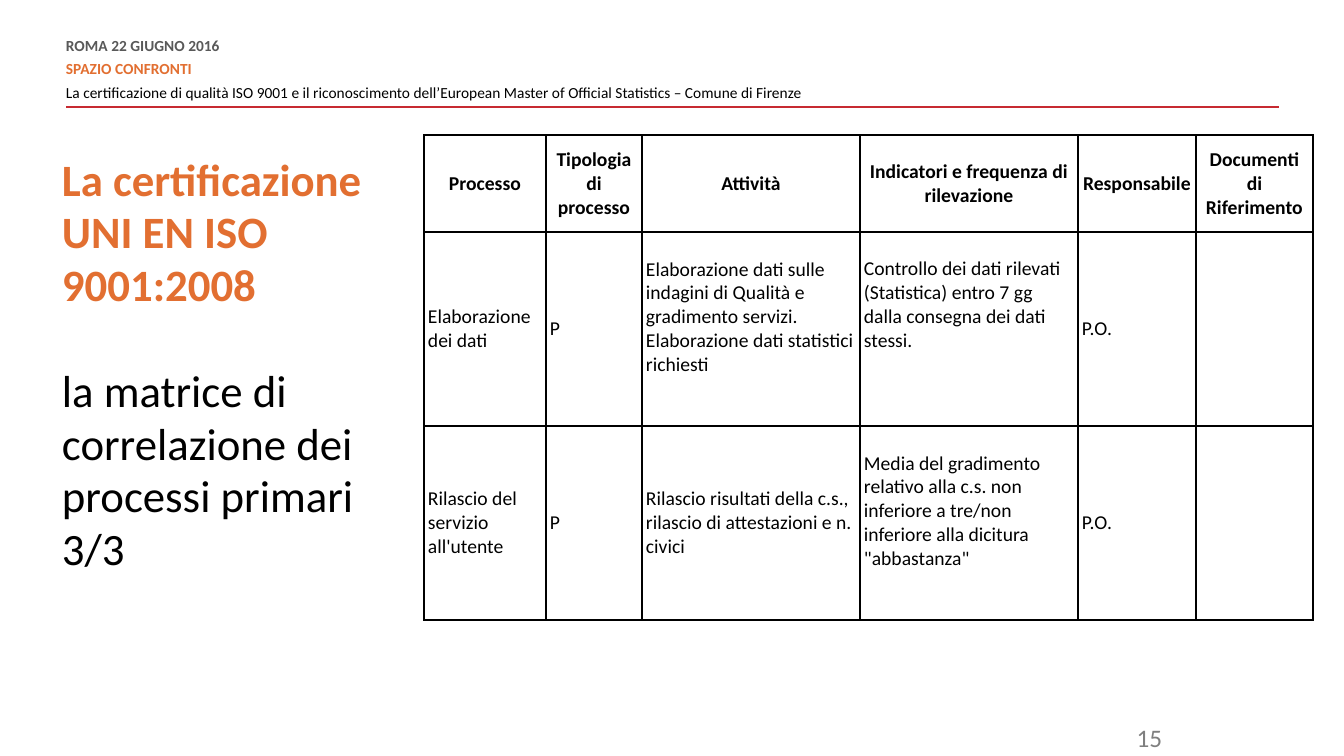
"""Build the slide with the matrix of primary processes."""
import pptx
import pptx.util
import pptx.dml.color
import pptx.enum.shapes
import pptx.enum.text
import pptx.oxml.ns
from lxml import etree

ORANGE = pptx.dml.color.RGBColor(0xE2, 0x6F, 0x31)
RED = pptx.dml.color.RGBColor(0xC7, 0x2A, 0x31)
DARK_GREY = pptx.dml.color.RGBColor(0x59, 0x59, 0x59)
GREY = pptx.dml.color.RGBColor(0x7F, 0x7F, 0x7F)
BLACK = pptx.dml.color.RGBColor(0, 0, 0)
FONT = "Calibri"
PX = 914400 / 100.8
ALIGN = pptx.enum.text.PP_ALIGN
qn = pptx.oxml.ns.qn


def px(n):
    return pptx.util.Emu(round(n * PX))


def add_run(p, text, size, color, bold=False):
    r = p.add_run()
    r.text = text
    r.font.name = FONT
    r.font.size = pptx.util.Pt(size)
    r.font.bold = bold
    r.font.color.rgb = color


prs = pptx.Presentation()
prs.slide_width = px(1344)
prs.slide_height = px(756)
s = prs.slides.add_slide(prs.slide_layouts[6])

rule = s.shapes.add_connector(
    pptx.enum.shapes.MSO_CONNECTOR.STRAIGHT, px(1279), px(107), px(66), px(107))
rule.line.color.rgb = RED
rule.line.width = pptx.util.Pt(2)
etree.SubElement(rule.element.spPr, qn("a:effectLst"))

frames = []
for box in [(66, 39, 841, 64), (62, 154, 334, 383), (870, 717, 302, 40)]:
    tf = s.shapes.add_textbox(*[px(n) for n in box]).text_frame
    tf.word_wrap = True
    frames.append(tf)
header, title, number = frames
for tf in (header, title):
    tf.margin_left = tf.margin_right = tf.margin_top = tf.margin_bottom = 0

header_lines = [
    ("ROMA 22 GIUGNO 2016", DARK_GREY, True),
    ("SPAZIO CONFRONTI", ORANGE, True),
    ("La certificazione di qualità ISO 9001 e il riconoscimento dell’European "
     "Master of Official Statistics – Comune di Firenze", BLACK, False),
]
for i, (text, color, bold) in enumerate(header_lines):
    p = header.add_paragraph() if i else header.paragraphs[0]
    p.line_spacing = pptx.util.Pt(10.8)
    p.space_after = pptx.util.Pt(6)
    add_run(p, text, 11, color, bold)

p = title.paragraphs[0]
p.line_spacing = 0.98
add_run(p, "La certificazione UNI EN ISO 9001:2008", 32, ORANGE, True)
p = title.add_paragraph()
p.line_spacing = 0.98
p.space_before = pptx.util.Pt(38)
add_run(p, "la matrice di correlazione dei processi primari", 32, BLACK)
p.add_line_break()
add_run(p, "3/3", 32, BLACK)

p = number.paragraphs[0]
p.alignment = ALIGN.RIGHT
add_run(p, "15", 18, GREY)

rows = [
    ["Processo", "Tipologia di processo", "Attività",
     "Indicatori e frequenza di rilevazione", "Responsabile",
     "Documenti di Riferimento"],
    ["Elaborazione dei dati", "P",
     "Elaborazione dati sulle indagini di Qualità e gradimento servizi. "
     "Elaborazione dati statistici richiesti",
     "Controllo dei dati rilevati (Statistica) entro 7 gg dalla consegna dei "
     "dati stessi.", "P.O.", ""],
    ["Rilascio del servizio all'utente", "P",
     "Rilascio risultati della c.s., rilascio di attestazioni e n. civici",
     "Media del gradimento relativo alla c.s. non inferiore a tre/non "
     "inferiore alla dicitura \"abbastanza\"", "P.O.", ""],
]
col_widths = [122, 96, 218, 218, 118, 117]
row_heights = [97, 194, 194]
bottom_margins = {(1, 2): 24, (1, 3): 48, (2, 3): 24}

table = s.shapes.add_table(
    len(rows), len(col_widths), px(424), px(135),
    px(sum(col_widths)), px(sum(row_heights))).table
table.first_row = False
table.horz_banding = False
for col, width in zip(table.columns, col_widths):
    col.width = px(width)
for i, (row, height) in enumerate(zip(rows, row_heights)):
    table.rows[i].height = px(height)
    for j, text in enumerate(row):
        cell = table.cell(i, j)
        cell.margin_left = cell.margin_right = px(4)
        cell.margin_top = 0
        cell.margin_bottom = px(bottom_margins.get((i, j), 0))
        cell.vertical_anchor = pptx.enum.text.MSO_ANCHOR.MIDDLE
        tcPr = cell._tc.get_or_add_tcPr()
        for side in ("a:lnL", "a:lnR", "a:lnT", "a:lnB"):
            ln = etree.SubElement(tcPr, qn(side), w="12700")
            fill = etree.SubElement(ln, qn("a:solidFill"))
            etree.SubElement(fill, qn("a:srgbClr"), val=str(BLACK))
        cell.fill.background()
        if text:
            p = cell.text_frame.paragraphs[0]
            p.alignment = ALIGN.LEFT if i else ALIGN.CENTER
            add_run(p, text, 14, BLACK, i == 0)

prs.save("out.pptx")
